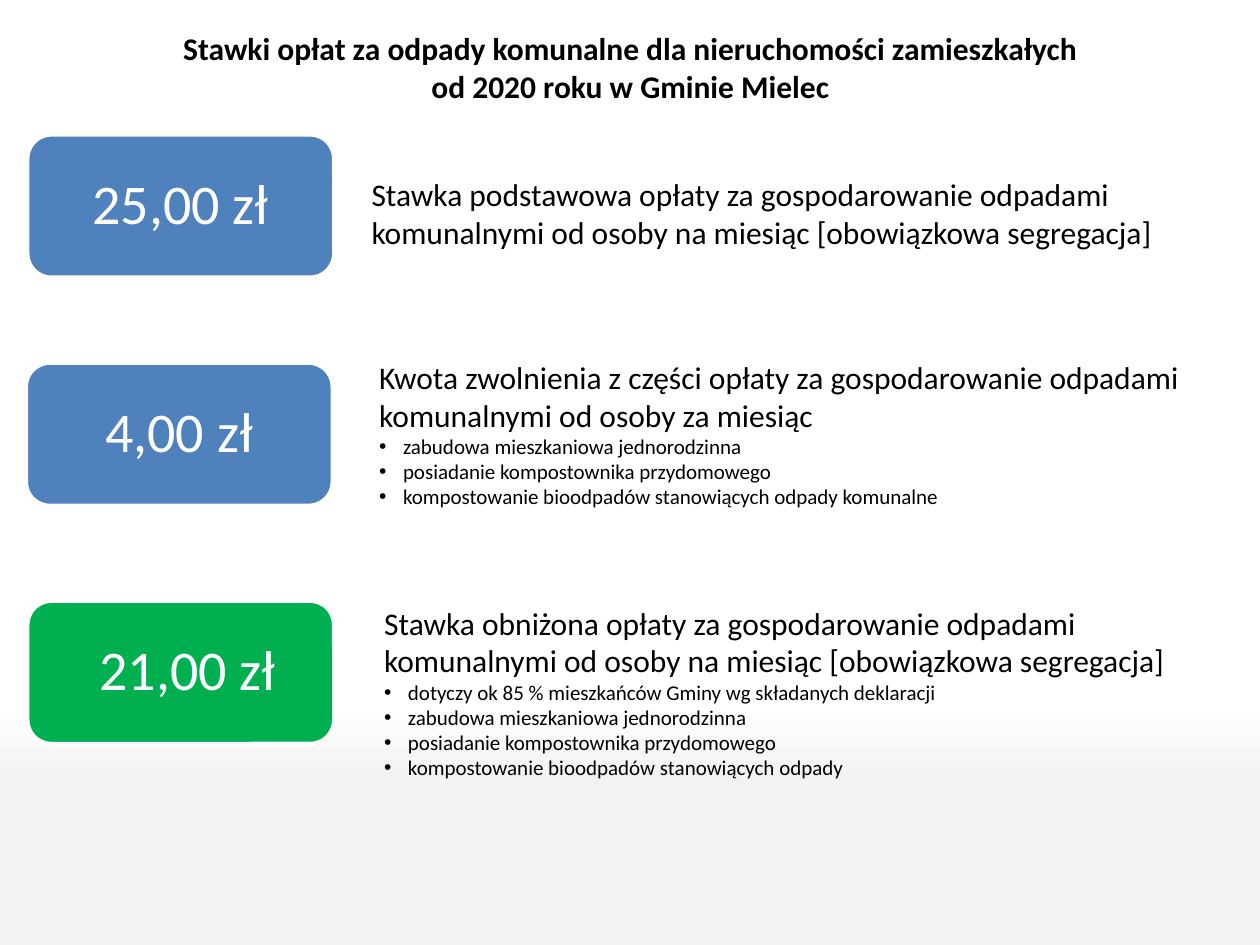
from lxml import etree
from pptx import Presentation
from pptx.dml.color import RGBColor
from pptx.enum.shapes import MSO_SHAPE
from pptx.enum.text import MSO_ANCHOR, MSO_AUTO_SIZE, PP_ALIGN
from pptx.oxml.ns import qn
from pptx.util import Cm, Pt

ROUNDED = MSO_SHAPE.ROUNDED_RECTANGLE
TOP, MIDDLE = MSO_ANCHOR.TOP, MSO_ANCHOR.MIDDLE
LEFT, CENTER = PP_ALIGN.LEFT, PP_ALIGN.CENTER
NO_AUTOFIT = MSO_AUTO_SIZE.NONE

COLORS = {"blue": "4F81BD", "green": "00B050", "white": "FFFFFF",
          "black": "000000", "grey": "F2F2F2"}
BACKGROUND = [(0, "white"), (74, "white"), (83, "grey"), (100, "grey")]
FONT = "Calibri"

TITLE = ["Stawki opłat za odpady komunalne dla nieruchomości zamieszkałych",
         "od 2020 roku w Gminie Mielec"]
TITLE_BOX = (3.3, 0.46, 18.82, 1.8)

# Boxes are left, top, width, height in centimetres.
RATES = [
    {"amount": "25,00 zł", "color": "blue", "card": (0.56, 2.72), "shift": 0,
     "box": (7.24, 3.4, 18.01, 1.8),
     "heading": "Stawka podstawowa opłaty za gospodarowanie odpadami "
                "komunalnymi od osoby na miesiąc [obowiązkowa segregacja]",
     "conditions": []},
    {"amount": "4,00 zł", "color": "blue", "card": (0.53, 7.32), "shift": 0,
     "box": (7.39, 7.09, 18.01, 3.33),
     "heading": "Kwota zwolnienia z części opłaty za gospodarowanie odpadami "
                "komunalnymi od osoby za miesiąc",
     "conditions": ["zabudowa mieszkaniowa jednorodzinna",
                    "posiadanie kompostownika przydomowego",
                    "kompostowanie bioodpadów stanowiących odpady komunalne"]},
    {"amount": "21,00 zł", "color": "green", "card": (0.56, 12.12), "shift": 0.28,
     "box": (7.49, 12.04, 17.48, 3.84),
     "heading": "Stawka obniżona opłaty za gospodarowanie odpadami "
                "komunalnymi od osoby na miesiąc [obowiązkowa segregacja]",
     "conditions": ["dotyczy ok 85 % mieszkańców Gminy wg składanych deklaracji",
                    "zabudowa mieszkaniowa jednorodzinna",
                    "posiadanie kompostownika przydomowego",
                    "kompostowanie bioodpadów stanowiących odpady"]},
]
CARD_SIZE = (6.17, 2.87)
CARD_INSET = 0.32
BULLET_INDENT = Cm(0.48)


def rgb(name):
    return RGBColor.from_string(COLORS[name])


def move(shape, box):
    shape.left, shape.top, shape.width, shape.height = map(Cm, box)


def prepare(frame, anchor=TOP, wrap=True):
    frame.auto_size = NO_AUTOFIT
    frame.word_wrap = wrap
    frame.vertical_anchor = anchor


def write(frame, text, size=18, color="black", bold=False, align=LEFT,
          spacing=1.0, bullet=False):
    """Fill the empty first paragraph, or add one after the existing text."""
    first = frame.paragraphs[0]
    paragraph = frame.add_paragraph() if first.runs else first
    paragraph.alignment = align
    paragraph.line_spacing = spacing
    paragraph.space_before = paragraph.space_after = Pt(0)
    run = paragraph.add_run()
    run.text = text
    run.font.name, run.font.size, run.font.bold = FONT, Pt(size), bold
    run.font.color.rgb = rgb(color)

    properties = paragraph._p.get_or_add_pPr()
    indent = BULLET_INDENT if bullet else 0
    properties.set("marL", str(indent))
    properties.set("indent", str(-indent))
    if bullet:
        etree.SubElement(properties, qn("a:buFont"), typeface="Arial")
        etree.SubElement(properties, qn("a:buChar"), char="•")
    else:
        etree.SubElement(properties, qn("a:buNone"))


def paint_background(slide):
    fill = slide.background.fill
    fill.gradient()
    fill.gradient_angle = 270
    stops = slide._element.find(".//" + qn("a:gsLst"))
    for stop in list(stops):
        stops.remove(stop)
    for percent, color in BACKGROUND:
        stop = etree.SubElement(stops, qn("a:gs"), pos=str(percent * 1000))
        etree.SubElement(stop, qn("a:srgbClr"), val=COLORS[color])


def add_card(slide, rate):
    card = slide.shapes.add_shape(ROUNDED, *map(Cm, rate["card"] + CARD_SIZE))
    card.shadow.inherit = False
    card.fill.solid()
    card.fill.fore_color.rgb = rgb(rate["color"])
    card.line.color.rgb = rgb("white")
    card.line.width = Pt(2)
    frame = card.text_frame
    prepare(frame, anchor=MIDDLE)
    frame.margin_left = Cm(CARD_INSET + rate["shift"])
    frame.margin_right = Cm(CARD_INSET)
    write(frame, rate["amount"], size=32, color="white", align=CENTER, spacing=0.9)


def describe(shape, rate):
    move(shape, rate["box"])
    frame = shape.text_frame
    prepare(frame)
    write(frame, rate["heading"])
    for condition in rate["conditions"]:
        write(frame, condition, size=12, bullet=True)


def main():
    deck = Presentation()
    deck.slide_width, deck.slide_height = Cm(25.4), Cm(19.05)
    slide = deck.slides.add_slide(deck.slide_layouts.get_by_name("Two Content"))
    paint_background(slide)

    title = slide.shapes.title
    move(title, TITLE_BOX)
    prepare(title.text_frame, wrap=False)
    for line in TITLE:
        write(title.text_frame, line, bold=True, align=CENTER)

    lists = iter([slide.placeholders[1], slide.placeholders[2]])
    for rate in RATES:
        add_card(slide, rate)
        if rate["conditions"]:
            description = next(lists)
        else:
            description = slide.shapes.add_textbox(*map(Cm, rate["box"]))
        describe(description, rate)

    deck.save("out.pptx")


if __name__ == "__main__":
    main()
